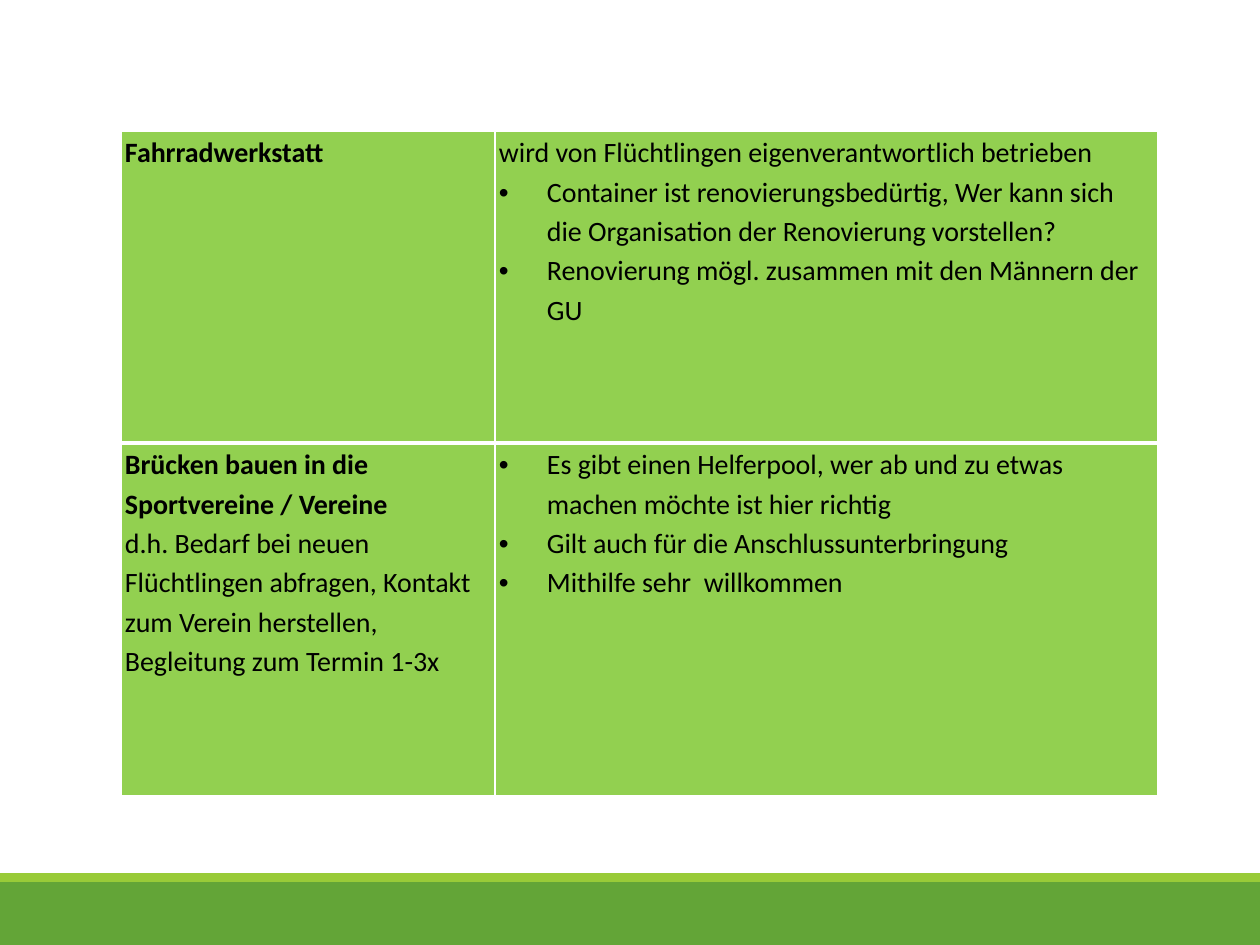
"""Build a slide with a green two-column task table above a footer band."""
from typing import NamedTuple

from lxml.etree import SubElement as Sub
from pptx import Presentation as Deck
from pptx.dml.color import RGBColor as RGB
from pptx.enum.shapes import MSO_SHAPE as Shape
from pptx.oxml.ns import qn
from pptx.util import Emu, Pt

BLACK = RGB(0x00, 0x00, 0x00)
WHITE = RGB(0xFF, 0xFF, 0xFF)
GRASS = RGB(0x92, 0xD0, 0x50)
LEAF = RGB(0x63, 0xA5, 0x37)
LIME = RGB(0x99, 0xCB, 0x38)
THIN, THICK = 1, 3
WIDE, HIGH = 1260, 945
COLS = (374, 663)
ROWS = (312, 353)


class Band(NamedTuple):
    top: int
    high: int
    fill: RGB


class Para(NamedTuple):
    text: str
    bold: bool = False
    dot: bool = False


BANDS = (Band(882, 63, LEAF), Band(873, 9, LIME))
GRID = (
    (
        (Para("Fahrradwerkstatt", bold=True),),
        (
            Para("wird von Flüchtlingen eigenverantwortlich betrieben"),
            Para("Container ist renovierungsbedürtig, Wer kann sich die "
                 "Organisation der Renovierung vorstellen?", dot=True),
            Para("Renovierung mögl. zusammen mit den Männern der GU", dot=True),
        ),
    ),
    (
        (
            Para("Brücken bauen in die Sportvereine / Vereine", bold=True),
            Para("d.h. Bedarf bei neuen Flüchtlingen abfragen, Kontakt zum "
                 "Verein herstellen, Begleitung zum Termin 1-3x"),
        ),
        (
            Para("Es gibt einen Helferpool, wer ab und zu etwas machen möchte "
                 "ist hier richtig", dot=True),
            Para("Gilt auch für die Anschlussunterbringung", dot=True),
            Para("Mithilfe sehr  willkommen", dot=True),
        ),
    ),
)


def px(n: int) -> Emu:
    """Turn pixels into EMU."""
    return Emu(round(n * 914400 / 126))


def draw_band(slide, band: Band) -> None:
    """Draw one full-width footer band."""
    bar = slide.shapes.add_shape(
        Shape.RECTANGLE, 0, px(band.top), px(WIDE), px(band.high))
    bar.shadow.inherit = False
    bar.fill.solid()
    bar.fill.fore_color.rgb = band.fill
    bar.line.fill.background()


def add_edge(cell, side: str, width: int) -> None:
    """Add a white border to one side of a cell."""
    props = cell._tc.get_or_add_tcPr()
    edge = Sub(props, qn(f"a:ln{side}"), w=str(Pt(width)))
    Sub(Sub(edge, qn("a:solidFill")), qn("a:srgbClr"), val=str(WHITE))


def add_dot(line) -> None:
    """Give a paragraph a hanging bullet."""
    props = line._p.get_or_add_pPr()
    props.set("marL", str(px(48)))
    props.set("indent", str(px(-48)))
    Sub(props, qn("a:buFont"), typeface="Arial")
    Sub(props, qn("a:buChar"), char="•")


def fill_cell(cell, paras: tuple[Para, ...], top: int, base: int) -> None:
    """Style one cell and write its paragraphs."""
    cell.margin_left = cell.margin_right = px(4)
    cell.margin_top = cell.margin_bottom = 0
    for side, width in zip("LRTB", (THIN, THIN, top, base)):
        add_edge(cell, side, width)
    cell.fill.solid()
    cell.fill.fore_color.rgb = GRASS
    frame = cell.text_frame
    for i, para in enumerate(paras):
        line = frame.add_paragraph() if i else frame.paragraphs[0]
        line.text = para.text
        line.line_spacing = 1.15
        if para.dot:
            add_dot(line)
        font = line.font
        font.name, font.size, font.bold = "Calibri", Pt(16), para.bold
        font.color.rgb = BLACK


def draw_table(slide) -> None:
    """Draw the task table."""
    table = slide.shapes.add_table(
        len(ROWS), len(COLS), px(121), px(131),
        px(sum(COLS)), px(sum(ROWS))).table
    for col, wide in zip(table.columns, COLS):
        col.width = px(wide)
    for r, (high, cells) in enumerate(zip(ROWS, GRID)):
        table.rows[r].height = px(high)
        top, base = (THICK, THIN) if r else (THIN, THICK)
        for c, paras in enumerate(cells):
            fill_cell(table.cell(r, c), paras, top, base)


def main() -> None:
    """Build and save the slide."""
    deck = Deck()
    deck.slide_width, deck.slide_height = px(WIDE), px(HIGH)
    slide = deck.slides.add_slide(deck.slide_layouts[6])
    for band in BANDS:
        draw_band(slide, band)
    draw_table(slide)
    deck.save("out.pptx")


if __name__ == "__main__":
    main()
